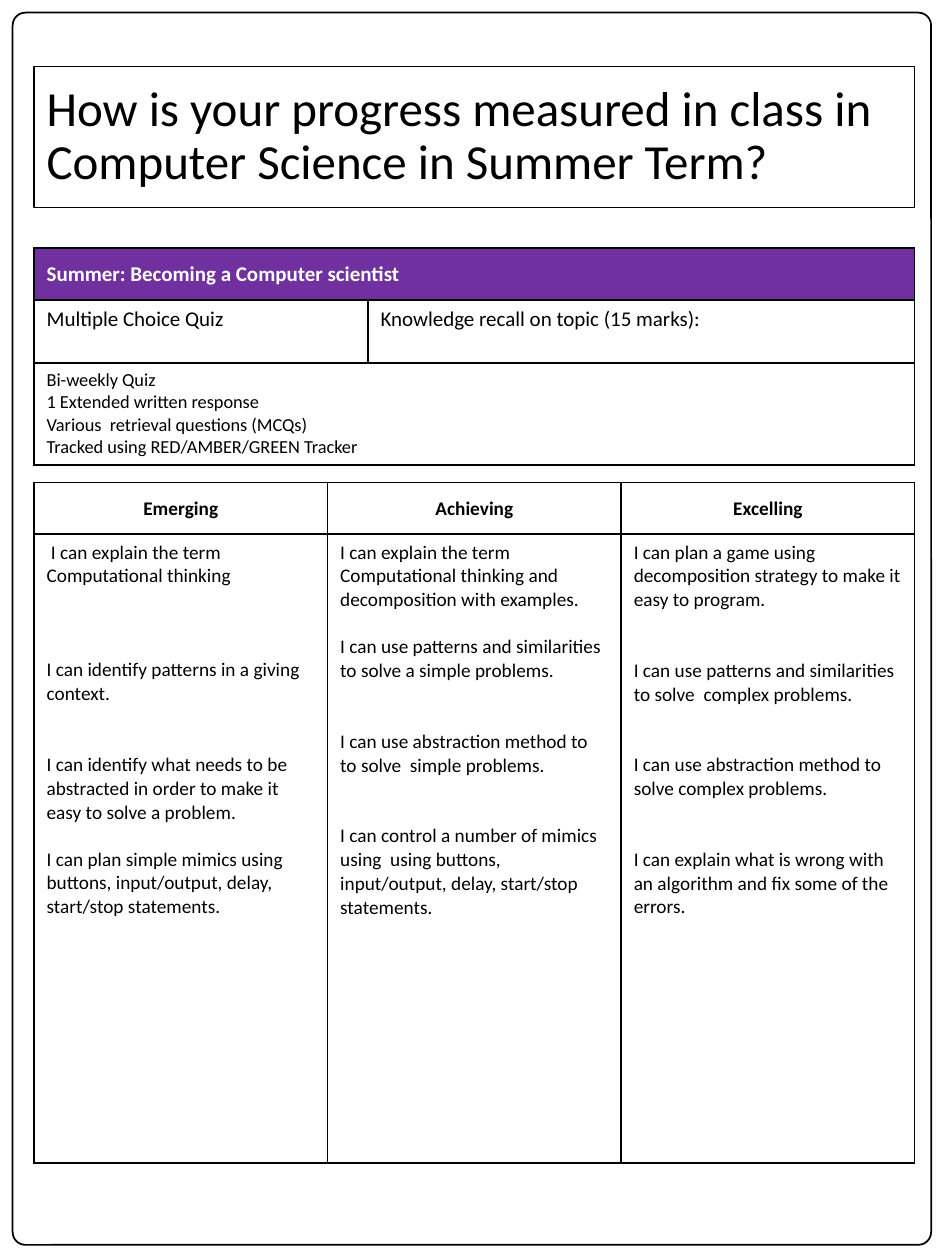
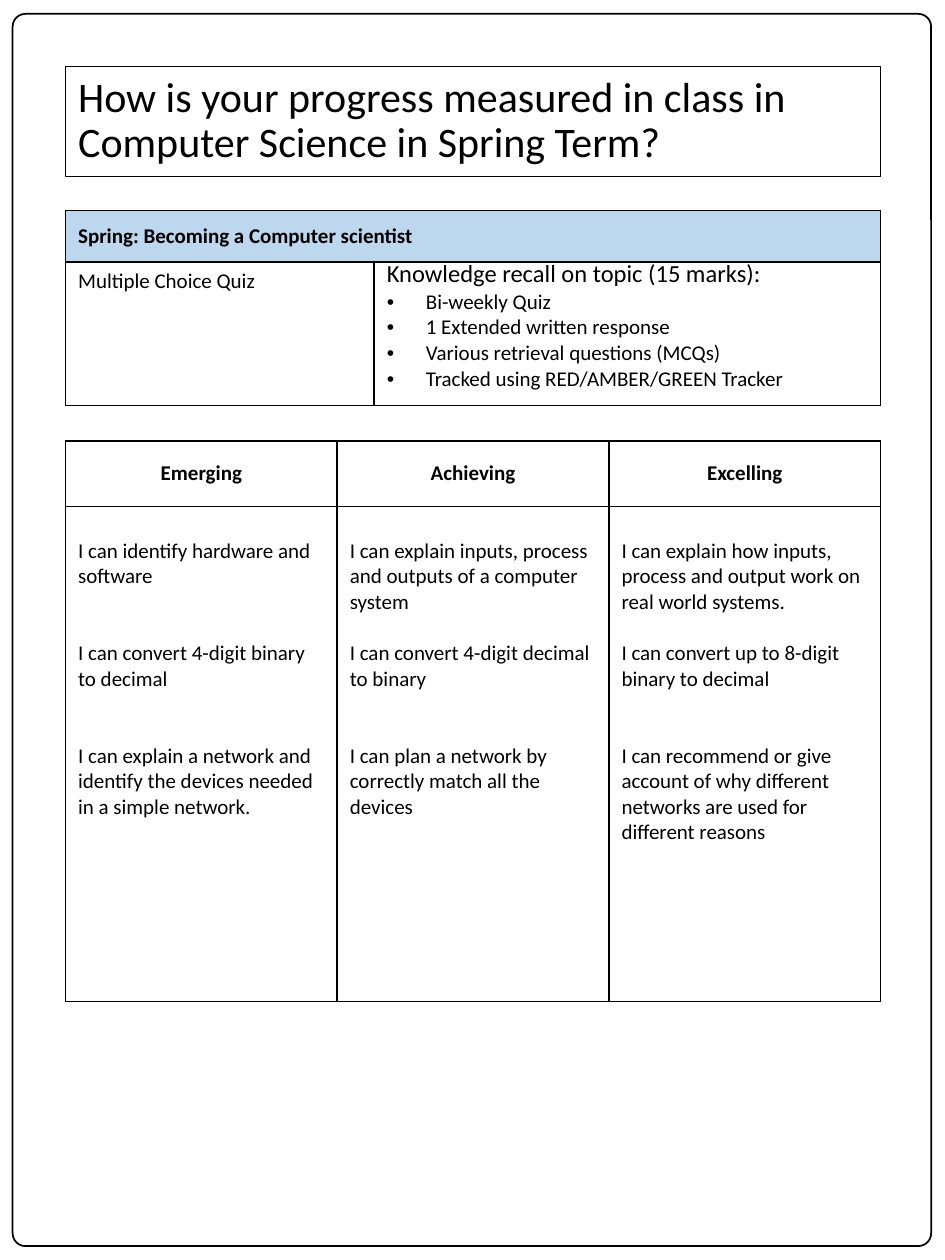
from lxml import etree
from pptx import Presentation
from pptx import util as u
from pptx.dml.color import RGBColor
from pptx.enum import shapes, text
from pptx.oxml.ns import qn

INK, PAPER = "000000", "FFFFFF"
LINE = 1.22
HEADS = ["Emerging", "Achieving", "Excelling"]


def paint(hue):
    return RGBColor.from_string(hue)


class Sheet:
    font = "Calibri"
    pad = 0.05
    indent = 0.31

    def __init__(self):
        self.deck = Presentation()
        self.deck.slide_width = u.Inches(7.5)
        self.deck.slide_height = u.Inches(10)

    def page(self, left, wide):
        self.left, self.wide = left, wide
        self.slide = self.deck.slides.add_slide(self.deck.slide_layouts[5])

    def run(self, para, words, size, hue=INK, bold=False):
        run = para.add_run()
        run.text = words
        run.font.name = self.font
        run.font.size = u.Pt(size)
        run.font.bold = bold
        run.font.color.rgb = paint(hue)

    def edge(self, shape, width):
        shape.line.color.rgb = paint(INK)
        shape.line.width = u.Pt(width)

    def frame(self, top):
        box = self.slide.shapes.add_shape(
            shapes.MSO_SHAPE.ROUNDED_RECTANGLE,
            u.Inches(0.1), u.Inches(top), u.Inches(7.29), u.Inches(9.78))
        box.adjustments[0] = 0.014
        box.shadow.inherit = False
        box.fill.solid()
        box.fill.fore_color.rgb = paint(PAPER)
        self.edge(box, 1)
        self.slide.shapes._spTree.insert(2, box._element)

    def title(self, words, high, size):
        box = self.slide.shapes.title
        box.left, box.top = u.Inches(self.left), u.Inches(0.53)
        box.width, box.height = u.Inches(self.wide), u.Inches(high)
        self.edge(box, 0.75)
        frame = box.text_frame
        frame.word_wrap = True
        frame.auto_size = text.MSO_AUTO_SIZE.NONE
        frame.vertical_anchor = text.MSO_ANCHOR.MIDDLE
        para = frame.paragraphs[0]
        para.alignment = text.PP_ALIGN.LEFT
        para.line_spacing = 0.9
        self.run(para, words, size)

    def table(self, top, cols, rows):
        shape = self.slide.shapes.add_table(
            len(rows), len(cols), u.Inches(self.left), u.Inches(top),
            u.Inches(sum(cols)), u.Inches(sum(rows)))
        grid = shape.table
        grid.first_row = grid.horz_banding = False
        for col, wide in zip(grid.columns, cols):
            col.width = u.Inches(wide)
        for row, high in zip(grid.rows, rows):
            row.height = u.Inches(high)
        for cell in grid.iter_cells():
            self.rule(cell)
            self.fill(cell, PAPER)
        return grid

    def rule(self, cell):
        props = cell._tc.get_or_add_tcPr()
        for side in ("a:lnL", "a:lnR", "a:lnT", "a:lnB"):
            line = etree.SubElement(props, qn(side), w=str(u.Pt(1)))
            solid = etree.SubElement(line, qn("a:solidFill"))
            etree.SubElement(solid, qn("a:srgbClr"), val=INK)

    def fill(self, cell, hue):
        cell.fill.solid()
        cell.fill.fore_color.rgb = paint(hue)

    def cell(self, cell, lines, size, gaps=(), lead=0):
        cell.margin_top = u.Inches(self.pad) + u.Pt(lead * LINE * size)
        frame = cell.text_frame
        for num, words in enumerate(lines):
            para = frame.add_paragraph() if num else frame.paragraphs[0]
            if num and gaps:
                para.space_before = u.Pt(gaps[num - 1] * LINE * size)
            self.run(para, words, size)

    def head(self, cell, words, size, hue=INK, mid=False):
        cell.vertical_anchor = text.MSO_ANCHOR.MIDDLE
        para = cell.text_frame.paragraphs[0]
        if mid:
            para.alignment = text.PP_ALIGN.CENTER
        self.run(para, words, size, hue, True)

    def band(self, grid, row, hue):
        first, last = grid.cell(row, 0), grid.cell(row, 1)
        self.fill(first, hue)
        self.fill(last, hue)
        first.merge(last)
        return first

    def bullet(self, frame, words, size):
        para = frame.add_paragraph()
        props = para._p.get_or_add_pPr()
        step = u.Inches(self.indent)
        props.set("marL", str(step))
        props.set("indent", str(-step))
        etree.SubElement(props, qn("a:buFont"), typeface="Arial")
        etree.SubElement(props, qn("a:buChar"), char="•")
        self.run(para, words, size)

    def levels(self, top, rows, size, goals, lead=0):
        grid = self.table(top, [self.wide / 3] * 3, rows)
        for col, (name, (lines, gaps)) in enumerate(zip(HEADS, goals)):
            self.head(grid.cell(0, col), name, size, mid=True)
            self.cell(grid.cell(1, col), lines, size, gaps, lead)


def summer(sheet):
    sheet.page(0.27, 6.99)
    sheet.frame(0.1)
    sheet.title("How is your progress measured in class in "
                "Computer Science in Summer Term?", 1.12, 28)
    quiz = sheet.table(1.97, [2.65, 4.34], [0.41, 0.5, 0.81])
    sheet.head(sheet.band(quiz, 0, "7030A0"),
               "Summer: Becoming a Computer scientist", 12, PAPER)
    sheet.cell(quiz.cell(1, 0), ["Multiple Choice Quiz"], 12)
    sheet.cell(quiz.cell(1, 1), ["Knowledge recall on topic (15 marks):"], 12)
    sheet.cell(sheet.band(quiz, 2, PAPER), [
        "Bi-weekly Quiz",
        "1 Extended written response",
        "Various  retrieval questions (MCQs)",
        "Tracked using RED/AMBER/GREEN Tracker"], 10.5)
    sheet.levels(3.83, [0.41, 4.99], 11, [
        ([" I can explain the term Computational thinking",
          "I can identify patterns in a giving context.",
          "I can identify what needs to be abstracted in order to make it "
          "easy to solve a problem.",
          "I can plan simple mimics using buttons, input/output, delay, "
          "start/stop statements."], [3, 2, 1]),
        (["I can explain the term Computational thinking and "
          "decomposition with examples.",
          "I can use patterns and similarities to solve a simple problems.",
          "I can use abstraction method to to solve  simple problems.",
          "I can control a number of mimics using  using buttons, "
          "input/output, delay, start/stop statements."], [1, 2, 2]),
        (["I can plan a game using decomposition strategy to make it "
          "easy to program.",
          "I can use patterns and similarities to solve  complex problems.",
          "I can use abstraction method to solve complex problems.",
          "I can explain what is wrong with an algorithm and fix some of "
          "the errors."], [2, 2, 2])])


def spring(sheet):
    sheet.page(0.52, 6.47)
    sheet.frame(0.11)
    sheet.title("How is your progress measured in class in "
                "Computer Science in Spring Term?", 0.87, 24)
    quiz = sheet.table(1.67, [2.45, 4.02], [0.41, 1.14])
    sheet.head(sheet.band(quiz, 0, "BDD7EE"),
               "Spring: Becoming a Computer scientist", 12)
    sheet.cell(quiz.cell(1, 0), ["Multiple Choice Quiz"], 12)
    marks = quiz.cell(1, 1)
    sheet.cell(marks, ["Knowledge recall on topic (15 marks):"], 14)
    marks.text_frame.paragraphs[0].line_spacing = u.Pt(12)
    for words in ("Bi-weekly Quiz", "1 Extended written response",
                  "Various retrieval questions (MCQs)",
                  "Tracked using RED/AMBER/GREEN Tracker"):
        sheet.bullet(marks.text_frame, words, 12)
    sheet.levels(3.5, [0.52, 3.93], 12, [
        (["I can identify hardware and software",
          "I can convert 4-digit binary to decimal",
          "I can explain a network and identify the devices needed in a "
          "simple network."], [2, 2]),
        (["I can explain inputs, process and outputs of a computer system",
          "I can convert 4-digit decimal to binary",
          "I can plan a network by correctly match all the devices"], [1, 2]),
        (["I can explain how inputs, process and output work on real world "
          "systems.",
          "I can convert up to 8-digit binary to decimal",
          "I can recommend or give account of why different networks are "
          "used for different reasons"], [1, 2])], lead=1)


def main():
    sheet = Sheet()
    summer(sheet)
    spring(sheet)
    sheet.deck.save("out.pptx")


if __name__ == "__main__":
    main()
